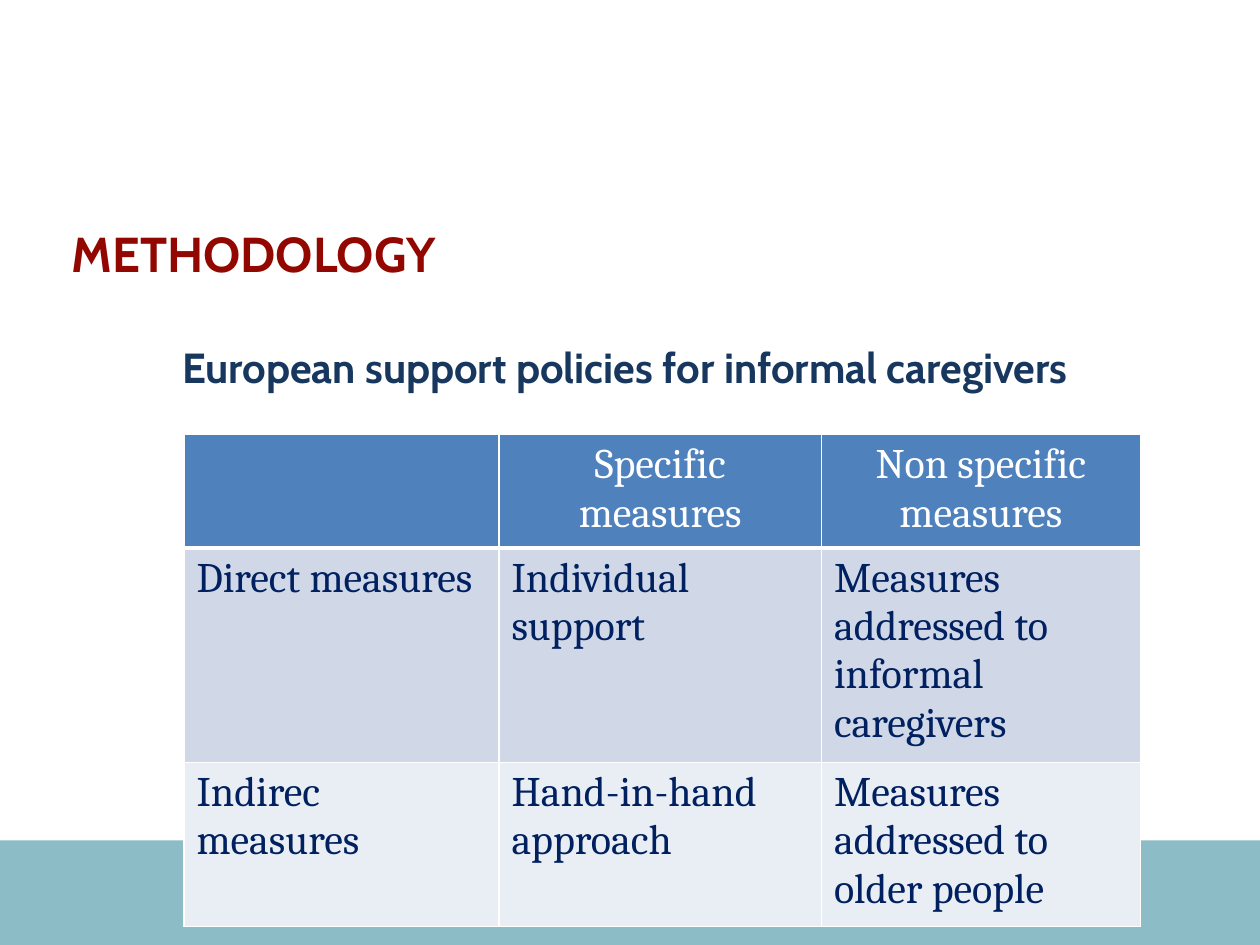
from dataclasses import dataclass

from lxml.etree import SubElement
from pptx import Presentation
from pptx.dml.color import RGBColor
from pptx.enum.shapes import MSO_SHAPE
from pptx.enum.text import MSO_ANCHOR, PP_ALIGN
from pptx.oxml.ns import qn
from pptx.util import Inches, Pt


@dataclass(frozen=True)
class Theme:
    heading_font: str = "Cabin"
    table_font: str = "Cambria"
    title_size: int = 28
    text_size: int = 24
    title_color: str = "920800"
    subtitle_color: str = "17375E"
    cell_color: str = "002060"
    white: str = "FFFFFF"
    band_color: str = "8CBCC6"
    header_fill: str = "4F81BD"
    row_fills: tuple = ("D0D8E8", "E9EDF4")
    border_width: int = 1
    header_rule_width: int = 3


class SlideBuilder:
    def __init__(self, slide, theme):
        self.slide = slide
        self.theme = theme

    def format_text(self, text_frame, font_name, size, color, bold=False,
                    alignment=PP_ALIGN.LEFT):
        for paragraph in text_frame.paragraphs:
            paragraph.alignment = alignment
            for run in paragraph.runs:
                run.font.name = font_name
                run.font.size = Pt(size)
                run.font.bold = bold
                run.font.color.rgb = RGBColor.from_string(color)

    def add_band(self, left, top, width, height):
        shape = self.slide.shapes.add_shape(
            MSO_SHAPE.RECTANGLE, left, top, width, height)
        shape.shadow.inherit = False
        shape.fill.solid()
        shape.fill.fore_color.rgb = RGBColor.from_string(self.theme.band_color)
        shape.line.fill.background()

    def add_title(self, text, left, top, width, height):
        title = self.slide.shapes.title
        title.left, title.top, title.width, title.height = left, top, width, height
        title.text_frame.text = text
        title.text_frame.vertical_anchor = MSO_ANCHOR.TOP
        self.format_text(title.text_frame, self.theme.heading_font,
                         self.theme.title_size, self.theme.title_color, bold=True)

    def add_subtitle(self, text, left, top, width, height):
        text_frame = self.slide.shapes.add_textbox(
            left, top, width, height).text_frame
        text_frame.word_wrap = True
        text_frame.text = text
        self.format_text(text_frame, self.theme.heading_font,
                         self.theme.text_size, self.theme.subtitle_color,
                         bold=True, alignment=PP_ALIGN.CENTER)

    def set_borders(self, cell, bottom_width):
        """Draw white lines on all four sides, placed before the cell fill."""
        properties = cell._tc.get_or_add_tcPr()
        widths = dict.fromkeys(("a:lnL", "a:lnR", "a:lnT"), self.theme.border_width)
        widths["a:lnB"] = bottom_width
        for index, (tag, width) in enumerate(widths.items()):
            line = SubElement(properties, qn(tag), w=str(Pt(width)))
            fill = SubElement(line, qn("a:solidFill"))
            SubElement(fill, qn("a:srgbClr"), val=self.theme.white)
            properties.insert(index, line)

    def add_table(self, rows, left, top, column_widths, row_heights):
        theme = self.theme
        table = self.slide.shapes.add_table(
            len(rows), len(column_widths), left, top,
            sum(column_widths), sum(row_heights)).table
        for column, width in zip(table.columns, column_widths):
            column.width = width
        for row, height in zip(table.rows, row_heights):
            row.height = height
        for row_index, texts in enumerate(rows):
            is_header = row_index == 0
            fill = theme.header_fill if is_header else theme.row_fills[row_index - 1]
            for column_index, text in enumerate(texts):
                cell = table.cell(row_index, column_index)
                cell.text_frame.text = text
                self.format_text(
                    cell.text_frame, theme.table_font, theme.text_size,
                    theme.white if is_header else theme.cell_color,
                    alignment=PP_ALIGN.CENTER if is_header else PP_ALIGN.LEFT)
                cell.fill.solid()
                cell.fill.fore_color.rgb = RGBColor.from_string(fill)
                self.set_borders(cell, theme.header_rule_width if is_header
                                 else theme.border_width)


def main():
    presentation = Presentation()
    presentation.slide_width = Inches(10)
    presentation.slide_height = Inches(7.5)
    title_only = presentation.slide_layouts[5]
    builder = SlideBuilder(presentation.slides.add_slide(title_only), Theme())

    builder.add_band(Inches(0), Inches(6.67), Inches(10), Inches(0.83))
    builder.add_title("METHODOLOGY",
                      Inches(0.47), Inches(1.72), Inches(9), Inches(1.09))
    builder.add_subtitle("European support policies for informal caregivers",
                         Inches(0.63), Inches(2.66), Inches(8.66), Inches(0.5))
    builder.add_table(
        [
            ("", "Specific measures", "Non specific measures"),
            ("Direct measures", "Individual support",
             "Measures addressed to informal caregivers"),
            ("Indirec measures", "Hand-in-hand approach",
             "Measures addressed to older people"),
        ],
        Inches(1.46), Inches(3.45),
        column_widths=[Inches(2.5), Inches(2.56), Inches(2.53)],
        row_heights=[Inches(0.72), Inches(0.93), Inches(0.72)])

    presentation.save("out.pptx")


if __name__ == "__main__":
    main()
